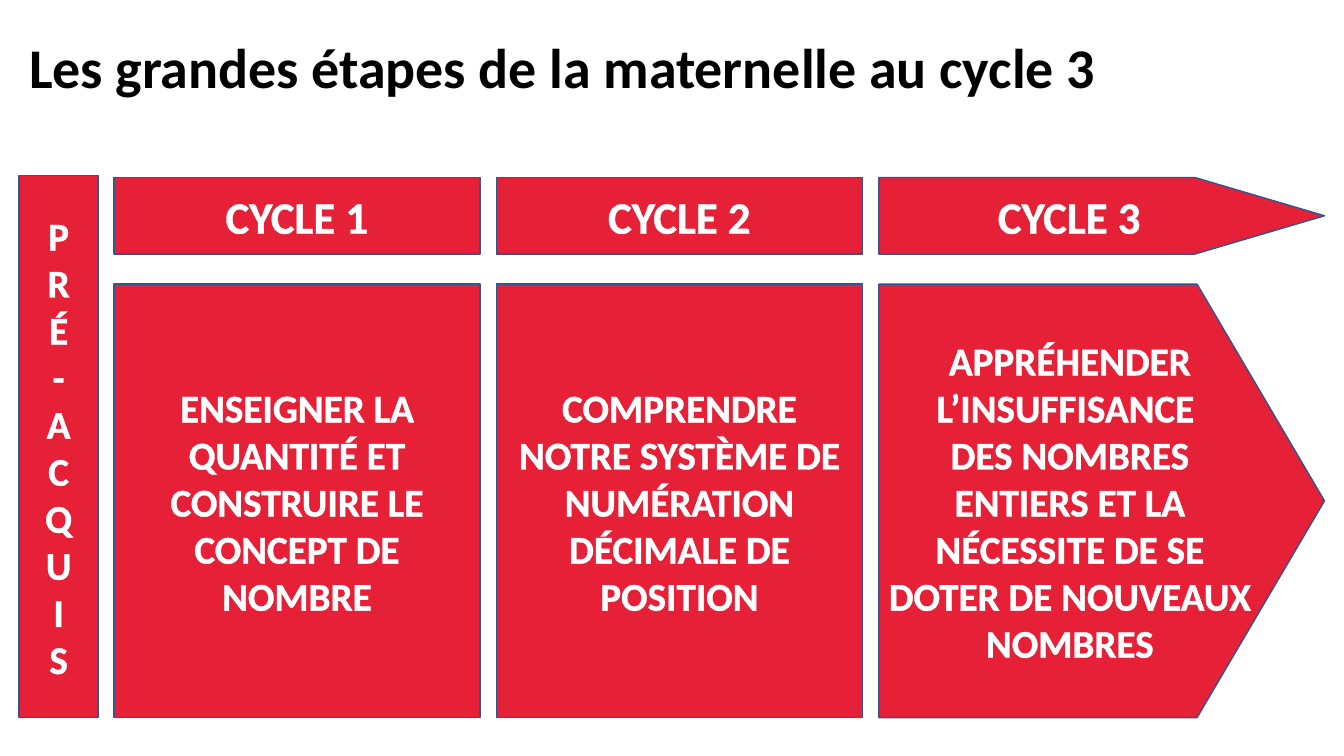
from lxml import etree
from pptx import Presentation
from pptx.dml.color import RGBColor
from pptx.enum.shapes import MSO_SHAPE
from pptx.enum.text import MSO_ANCHOR, MSO_AUTO_SIZE, PP_ALIGN
from pptx.oxml.ns import qn
from pptx.util import Pt

RECTANGLE = MSO_SHAPE.RECTANGLE
ARROW = MSO_SHAPE.PENTAGON
MIDDLE = MSO_ANCHOR.MIDDLE
CENTER = PP_ALIGN.CENTER
GROW = MSO_AUTO_SIZE.SHAPE_TO_FIT_TEXT

RED = RGBColor(0xE5, 0x20, 0x37)
BLUE = RGBColor(0x32, 0x54, 0x91)
WHITE = RGBColor(0xFF, 0xFF, 0xFF)
BLACK = RGBColor(0, 0, 0)

MARGIN = 13.7
FIRST_COLUMN, COLUMN_STEP = 81.4, 273.2
COLUMN_WIDTH, ARROW_WIDTH = 261.4, 318.3
HEADER_TOP, HEADER_HEIGHT = 126.8, 54.7
BODY_TOP, BODY_HEIGHT = 203, 309.6

CYCLES = [
    ("CYCLE 1", ["ENSEIGNER LA QUANTITÉ ET CONSTRUIRE LE CONCEPT DE NOMBRE"]),
    ("CYCLE 2", ["COMPRENDRE NOTRE SYSTÈME DE NUMÉRATION DÉCIMALE DE POSITION"]),
    ("CYCLE 3", ["APPRÉHENDER L’INSUFFISANCE ",
                 "DES NOMBRES ENTIERS ET LA NÉCESSITE DE SE DOTER DE NOUVEAUX NOMBRES"]),
]


class SlideWriter:
    def __init__(self, page, font_name="Calibri"):
        self.page = page
        self.font_name = font_name

    def style(self, para, size, color):
        para.font.name = self.font_name
        para.font.size = Pt(size)
        para.font.bold = True
        para.font.color.rgb = color

    def outline(self, span):
        """Give the letters a thin white contour."""
        line = etree.Element(qn("a:ln"), w=str(Pt(0.75)))
        fill = etree.SubElement(line, qn("a:solidFill"))
        etree.SubElement(fill, qn("a:srgbClr"), val=str(WHITE))
        span.font._element.insert(0, line)

    def title(self, text, left, top, width, height):
        box = self.page.shapes.add_textbox(Pt(left), Pt(top), Pt(width), Pt(height))
        frame = box.text_frame
        frame.word_wrap = True
        frame.auto_size = GROW
        frame.text = text
        self.style(frame.paragraphs[0], 40, BLACK)

    def block(self, lines, left, top, width, height, size=28, kind=RECTANGLE, point=None):
        """Draw a red block; point is the length of an arrow's tip."""
        shape = self.page.shapes.add_shape(kind, Pt(left), Pt(top), Pt(width), Pt(height))
        shape.shadow.inherit = False
        shape.fill.solid()
        shape.fill.fore_color.rgb = RED
        shape.line.color.rgb = BLUE
        shape.line.width = Pt(1)
        if point is not None:
            shape.adjustments[0] = point / min(width, height)
        frame = shape.text_frame
        frame.word_wrap = True
        frame.vertical_anchor = MIDDLE
        frame.text = "\n".join(lines)
        for para in frame.paragraphs:
            para.alignment = CENTER
            self.style(para, size, WHITE)
            for span in para.runs:
                self.outline(span)


def main():
    deck = Presentation()
    deck.slide_width, deck.slide_height = Pt(960), Pt(540)
    writer = SlideWriter(deck.slides.add_slide(deck.slide_layouts[6]))

    writer.title("Les grandes étapes de la maternelle au cycle 3", MARGIN, 19.4, 933, 55.7)
    for index, (name, goal) in enumerate(CYCLES):
        left = FIRST_COLUMN + index * COLUMN_STEP
        is_last = index == len(CYCLES) - 1
        kind = ARROW if is_last else RECTANGLE
        width = ARROW_WIDTH if is_last else COLUMN_WIDTH
        writer.block([name], left, HEADER_TOP, width, HEADER_HEIGHT, 32,
                     kind, 92.6 if is_last else None)
        writer.block(goal, left, BODY_TOP, width, BODY_HEIGHT, 28,
                     kind, 91 if is_last else None)
    writer.block("PRÉ-ACQUIS", MARGIN, 125.4, 56.4, 387)

    deck.save("out.pptx")


if __name__ == "__main__":
    main()
